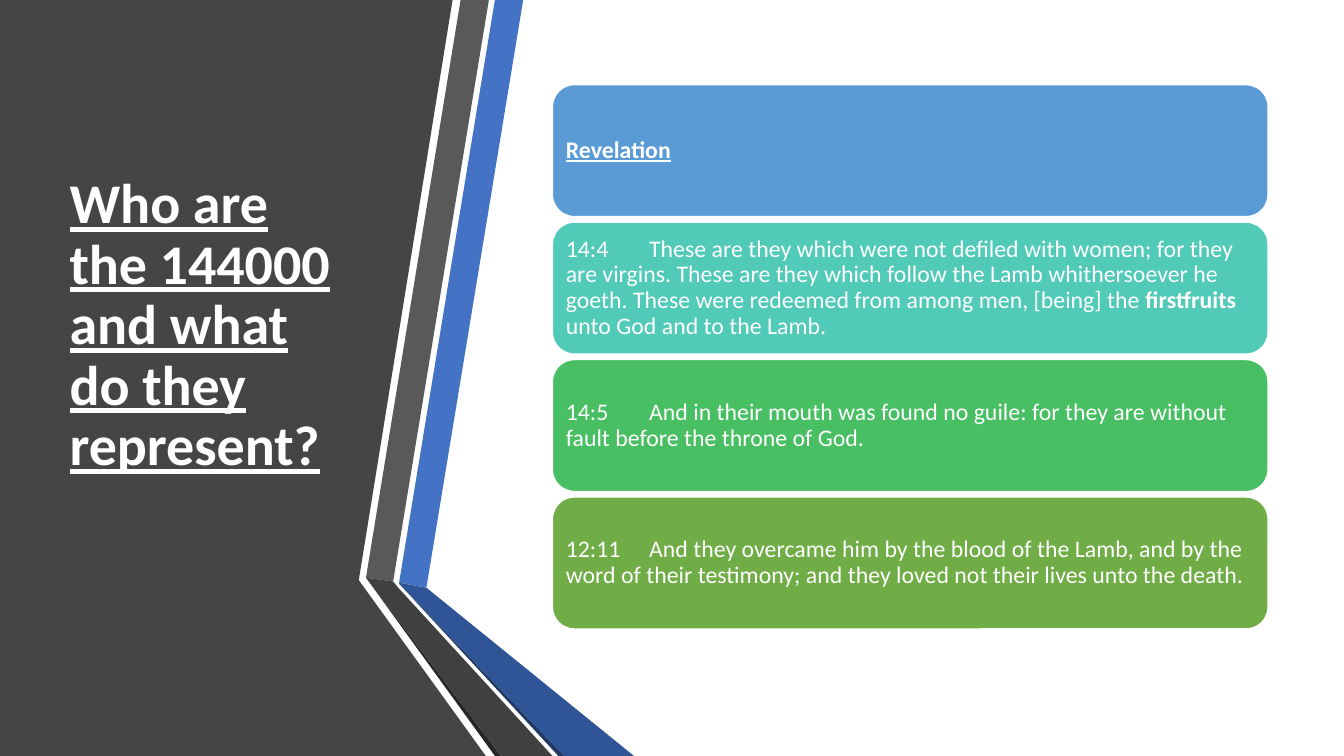
import pptx
import pptx.dml.color
import pptx.enum.shapes
import pptx.enum.text
import pptx.util

Pt = pptx.util.Pt
WHITE = "FFFFFF"
FONT = "Calibri"
FOLDS = [
    ("454545", [(0, 0), (323.3, 0), (256.3, 414.4), (347, 540), (0, 540)]),
    ("4472C4", [(285.1, 416.2), (304.6, 419.8), (373.7, 0), (353.5, 0)]),
    ("595959", [(349.2, 0), (329, 0), (261.4, 412.6), (280.8, 415.4)]),
    ("262626", [(261.4, 412.6), (353.5, 540), (357.8, 540)]),
    ("203864", [(285.1, 416.9), (398.9, 540), (403.2, 540)]),
    ("2F5597", [(285.1, 416.2), (285.1, 416.9), (403.2, 540), (452.9, 540), (304.6, 419.8)]),
    ("404040", [(394.6, 540), (284.4, 419.8), (280.8, 415.4), (261.4, 412.6), (357.8, 540)]),
]
QUESTION = "Who are the 144000 and what do they represent?"
VERSES = [
    ("5B9BD5", [("Revelation", True, True)]),
    ("52CAB8", [
        ("14:4\tThese are they which were not defiled with women; for they are virgins. "
         "These are they which follow the Lamb whithersoever he goeth. "
         "These were redeemed from among men, [being] the ", False, False),
        ("firstfruits", True, False),
        (" unto God and to the Lamb.", False, False),
    ]),
    ("49BF64", [
        ("14:5\tAnd in their mouth was found no guile: "
         "for they are without fault before the throne of God.", False, False),
    ]),
    ("70AD47", [
        ("12:11\tAnd they overcame him by the blood of the Lamb, and by the word of "
         "their testimony; and they loved not their lives unto the death.", False, False),
    ]),
]


def paint(color_format, hex_color):
    """Set a fill or font colour from a hex string."""
    color_format.rgb = pptx.dml.color.RGBColor.from_string(hex_color)


def fill_solid(shape, hex_color):
    """Give a shape a plain fill without shadow."""
    shape.shadow.inherit = False
    shape.fill.solid()
    paint(shape.fill.fore_color, hex_color)


def add_run(paragraph, text, size, bold, underline):
    """Append one white run to a paragraph."""
    run = paragraph.add_run()
    run.text = text
    run.font.name = FONT
    run.font.size = Pt(size)
    run.font.bold = bold
    run.font.underline = underline
    paint(run.font.color, WHITE)


def set_frame(frame, left, top, right, bottom):
    """Set wrapping, middle anchor and insets, and return the first paragraph."""
    frame.word_wrap = True
    frame.auto_size = pptx.enum.text.MSO_AUTO_SIZE.NONE
    frame.vertical_anchor = pptx.enum.text.MSO_ANCHOR.MIDDLE
    frame.margin_left, frame.margin_top = Pt(left), Pt(top)
    frame.margin_right, frame.margin_bottom = Pt(right), Pt(bottom)
    paragraph = frame.paragraphs[0]
    paragraph.alignment = pptx.enum.text.PP_ALIGN.LEFT
    paragraph.line_spacing = 0.9
    return paragraph


def draw_folded_panel(slide, left, top):
    """Draw the dark panel and its folded ribbons from the given corner."""
    for hex_color, corners in FOLDS:
        points = [(Pt(left + x), Pt(top + y)) for x, y in corners]
        outline = slide.shapes.build_freeform(*points[0], scale=1.0)
        outline.add_line_segments(points[1:], close=True)
        fold = outline.convert_to_shape()
        fill_solid(fold, hex_color)
        fold.line.fill.background()


def place_question(slide, left, top, width, height):
    """Place the title over the panel, raised above the middle of its box."""
    question = slide.shapes.title
    question.left, question.top = Pt(left), Pt(top)
    question.width, question.height = Pt(width), Pt(height)
    paragraph = set_frame(question.text_frame, 7.2, 3.6, 7.2, 47)
    add_run(paragraph, QUESTION, 40, True, True)
    question.element.getparent().append(question.element)


def draw_verses(slide, left, top, width, height, gap=3.9):
    """Stack one rounded card per verse in the given box."""
    card_height = (height - gap * (len(VERSES) - 1)) / len(VERSES)
    for index, (hex_color, passages) in enumerate(VERSES):
        card = slide.shapes.add_shape(
            pptx.enum.shapes.MSO_SHAPE.ROUNDED_RECTANGLE,
            Pt(left), Pt(top + index * (card_height + gap)), Pt(width), Pt(card_height))
        fill_solid(card, hex_color)
        paint(card.line.color, WHITE)
        card.line.width = Pt(1)
        paragraph = set_frame(card.text_frame, 5, 5, 5, 5)
        paragraph._p.get_or_add_pPr().set("defTabSz", str(Pt(59.5)))
        for text, bold, underline in passages:
            add_run(paragraph, text, 17, bold, underline)


def main():
    """Build and save the slide."""
    deck = pptx.Presentation()
    deck.slide_width, deck.slide_height = Pt(960), Pt(540)
    slide = deck.slides.add_slide(deck.slide_layouts[5])
    draw_folded_panel(slide, 0, 0)
    place_question(slide, 42.5, 54, 218.9, 401.8)
    draw_verses(slide, 394.6, 60.5, 511.2, 388.8)
    deck.save("out.pptx")


if __name__ == "__main__":
    main()
